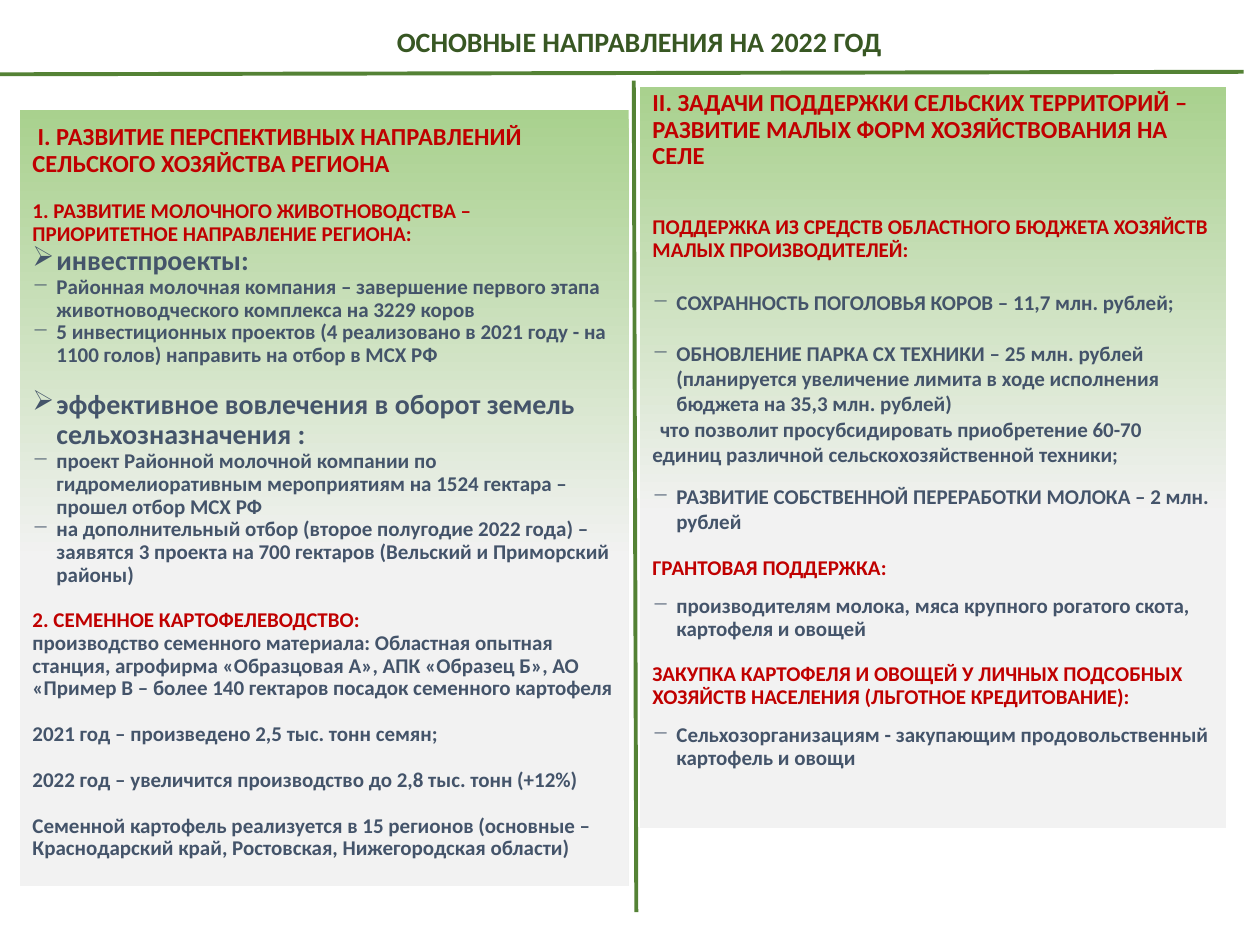
from dataclasses import dataclass

from lxml.etree import SubElement
from pptx import Presentation
from pptx.dml.color import RGBColor
from pptx.enum.shapes import MSO_CONNECTOR, MSO_SHAPE
from pptx.enum.text import MSO_ANCHOR, PP_ALIGN
from pptx.oxml.ns import qn
from pptx.util import Inches, Pt

FONT = "Calibri"
RED = RGBColor(0xC0, 0x00, 0x00)
SLATE = RGBColor(0x44, 0x54, 0x6A)
DARK_GREEN = RGBColor(0x38, 0x57, 0x23)
RULE_GREEN = RGBColor(0x54, 0x82, 0x35)
PANEL_TOP = RGBColor(0xA9, 0xD1, 0x8E)
PANEL_BOTTOM = RGBColor(0xF2, 0xF2, 0xF2)

HANGING = 0.19
GAP = 13.2  # one 12 pt line at 0.9 spacing
SMALL_GAP = 8.8  # one 8 pt line at 0.9 spacing


@dataclass
class Para:
    text: str
    color: RGBColor = SLATE
    size: int = 12
    bullet: str = ""
    before: float = 0
    spacing: float = 0.9
    indent: float = 0


@dataclass
class Panel:
    left: float
    top: float
    width: float
    height: float
    margin_top: float
    paras: list[Para]


def head(text: str, before: float = GAP, size: int = 12, indent: float = 0) -> Para:
    return Para(text, RED, size, before=before, indent=indent)


def topic(text: str, before: float = 0) -> Para:
    return Para(text, size=16, bullet="➢", before=before)


def dash(text: str, before: float = 0, spacing: float = 0.9) -> Para:
    return Para(text, bullet="−", before=before, spacing=spacing)


LEFT = Panel(0.16, 0.87, 4.83, 6.16, 0.12, [
    head("I. РАЗВИТИЕ ПЕРСПЕКТИВНЫХ НАПРАВЛЕНИЙ СЕЛЬСКОГО ХОЗЯЙСТВА РЕГИОНА",
         before=0, size=14, indent=0.04),
    head("1. РАЗВИТИЕ МОЛОЧНОГО ЖИВОТНОВОДСТВА – ПРИОРИТЕТНОЕ НАПРАВЛЕНИЕ РЕГИОНА:"),
    topic("инвестпроекты:"),
    dash("Районная молочная компания – завершение первого этапа "
         "животноводческого комплекса на 3229 коров"),
    dash("5 инвестиционных проектов (4 реализовано в 2021 году - на 1100 голов) "
         "направить на отбор в МСХ РФ"),
    topic("эффективное вовлечения в оборот земель сельхозназначения :", GAP),
    dash("проект Районной молочной компании по гидромелиоративным "
         "мероприятиям на 1524 гектара – прошел отбор МСХ РФ"),
    dash("на дополнительный отбор (второе полугодие 2022 года) – заявятся "
         "3 проекта на 700 гектаров (Вельский и Приморский районы)"),
    head("2. СЕМЕННОЕ КАРТОФЕЛЕВОДСТВО:"),
    Para("производство семенного материала: Областная опытная станция, "
         "агрофирма «Образцовая А», АПК «Образец Б», АО «Пример В – более "
         "140 гектаров посадок семенного картофеля"),
    Para("2021 год – произведено 2,5 тыс. тонн семян;", before=GAP),
    Para("2022 год – увеличится производство до 2,8 тыс. тонн (+12%)", before=GAP),
    Para("Семенной картофель реализуется в 15 регионов (основные – "
         "Краснодарский край, Ростовская, Нижегородская области)", before=GAP),
])

RIGHT = Panel(5.08, 0.69, 4.65, 5.88, 0.03, [
    head("II. ЗАДАЧИ ПОДДЕРЖКИ СЕЛЬСКИХ ТЕРРИТОРИЙ – РАЗВИТИЕ МАЛЫХ ФОРМ "
         "ХОЗЯЙСТВОВАНИЯ НА СЕЛЕ", before=0, size=14),
    head("ПОДДЕРЖКА ИЗ СРЕДСТВ ОБЛАСТНОГО БЮДЖЕТА ХОЗЯЙСТВ МАЛЫХ "
         "ПРОИЗВОДИТЕЛЕЙ:", before=2 * GAP),
    dash("СОХРАННОСТЬ ПОГОЛОВЬЯ КОРОВ – 11,7 млн. рублей;", SMALL_GAP, 1.5),
    dash("ОБНОВЛЕНИЕ ПАРКА СХ ТЕХНИКИ – 25 млн. рублей (планируется увеличение "
         "лимита в ходе исполнения бюджета на 35,3 млн. рублей)", 14.6, 1.0),
    Para("что позволит просубсидировать приобретение 60-70 единиц различной "
         "сельскохозяйственной техники;", spacing=1.0, indent=0.06),
    dash("РАЗВИТИЕ СОБСТВЕННОЙ ПЕРЕРАБОТКИ МОЛОКА – 2 млн. рублей", 9.8, 1.0),
    head("ГРАНТОВАЯ ПОДДЕРЖКА:"),
    dash("производителям молока, мяса крупного рогатого скота, картофеля и овощей",
         SMALL_GAP),
    head("ЗАКУПКА КАРТОФЕЛЯ И ОВОЩЕЙ У ЛИЧНЫХ ПОДСОБНЫХ ХОЗЯЙСТВ НАСЕЛЕНИЯ "
         "(ЛЬГОТНОЕ КРЕДИТОВАНИЕ):"),
    dash("Сельхозорганизациям - закупающим продовольственный картофель и овощи",
         SMALL_GAP),
])


def add_run(p, text: str, size: int, color: RGBColor) -> None:
    r = p.add_run()
    r.text = text
    r.font.name = FONT
    r.font.size = Pt(size)
    r.font.bold = True
    r.font.color.rgb = color


def write_para(p, para: Para) -> None:
    p.alignment = PP_ALIGN.LEFT
    p.line_spacing = para.spacing
    p.space_before = Pt(para.before)
    pPr = p._p.get_or_add_pPr()
    if para.bullet:
        pPr.set("marL", str(Inches(HANGING)))
        pPr.set("indent", str(-Inches(HANGING)))
        SubElement(pPr, qn("a:buChar")).set("char", para.bullet)
    else:
        pPr.set("indent", str(Inches(para.indent)))
    add_run(p, para.text, para.size, para.color)


def add_panel(s, panel: Panel) -> None:
    sp = s.shapes.add_shape(MSO_SHAPE.RECTANGLE, Inches(panel.left), Inches(panel.top),
                            Inches(panel.width), Inches(panel.height))
    sp.shadow.inherit = False
    sp.line.fill.background()
    sp.fill.gradient()
    sp.fill.gradient_angle = 270
    stops = ((0, PANEL_TOP), (0.58, PANEL_BOTTOM))
    for stop, (position, color) in zip(sp.fill.gradient_stops, stops):
        stop.position = position
        stop.color.rgb = color
    tf = sp.text_frame
    tf.word_wrap = True
    tf.vertical_anchor = MSO_ANCHOR.TOP
    tf.margin_top = Inches(panel.margin_top)
    for i, para in enumerate(panel.paras):
        write_para(tf.add_paragraph() if i else tf.paragraphs[0], para)


def add_title(s, text: str) -> None:
    sp = s.shapes.add_textbox(Inches(0.43), Inches(0.14), Inches(9.29), Inches(0.37))
    tf = sp.text_frame
    tf.word_wrap = True
    tf.vertical_anchor = MSO_ANCHOR.MIDDLE
    p = tf.paragraphs[0]
    p.alignment = PP_ALIGN.CENTER
    add_run(p, text, 16, DARK_GREEN)


def add_rule(s, x1: float, y1: float, x2: float, y2: float) -> None:
    line = s.shapes.add_connector(MSO_CONNECTOR.STRAIGHT, Inches(x1), Inches(y1),
                                  Inches(x2), Inches(y2))
    line.line.color.rgb = RULE_GREEN
    line.line.width = Pt(2.25)
    SubElement(line._element.spPr, qn("a:effectLst"))


def main() -> None:
    prs = Presentation()
    prs.slide_width, prs.slide_height = Inches(10), Inches(7.5)
    s = prs.slides.add_slide(prs.slide_layouts[6])
    for panel in (LEFT, RIGHT):
        add_panel(s, panel)
    add_title(s, "ОСНОВНЫЕ НАПРАВЛЕНИЯ НА 2022 ГОД")
    add_rule(s, 9.87, 0.57, -0.13, 0.59)
    add_rule(s, 5.03, 0.64, 5.05, 7.24)
    prs.save("out.pptx")


if __name__ == "__main__":
    main()
